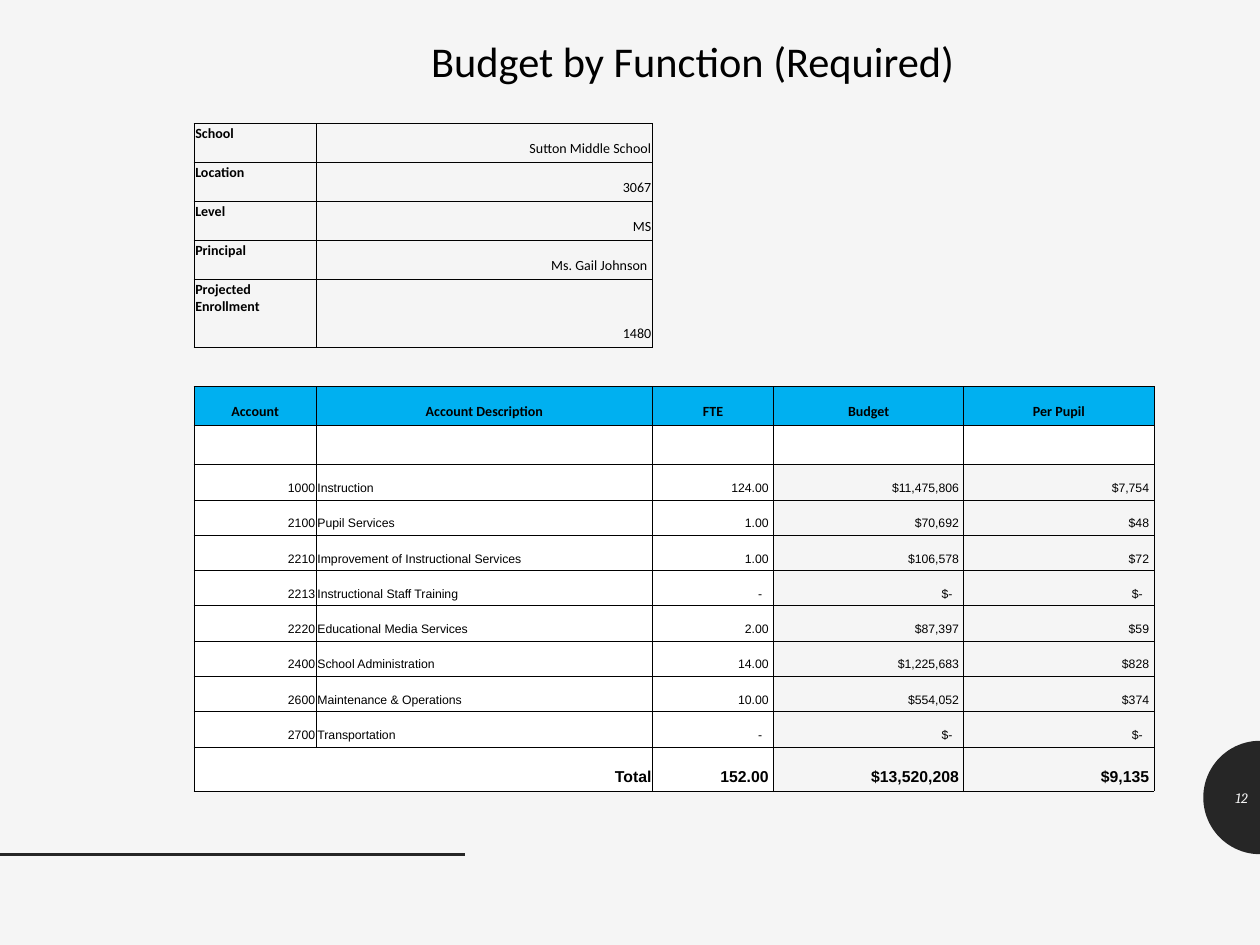
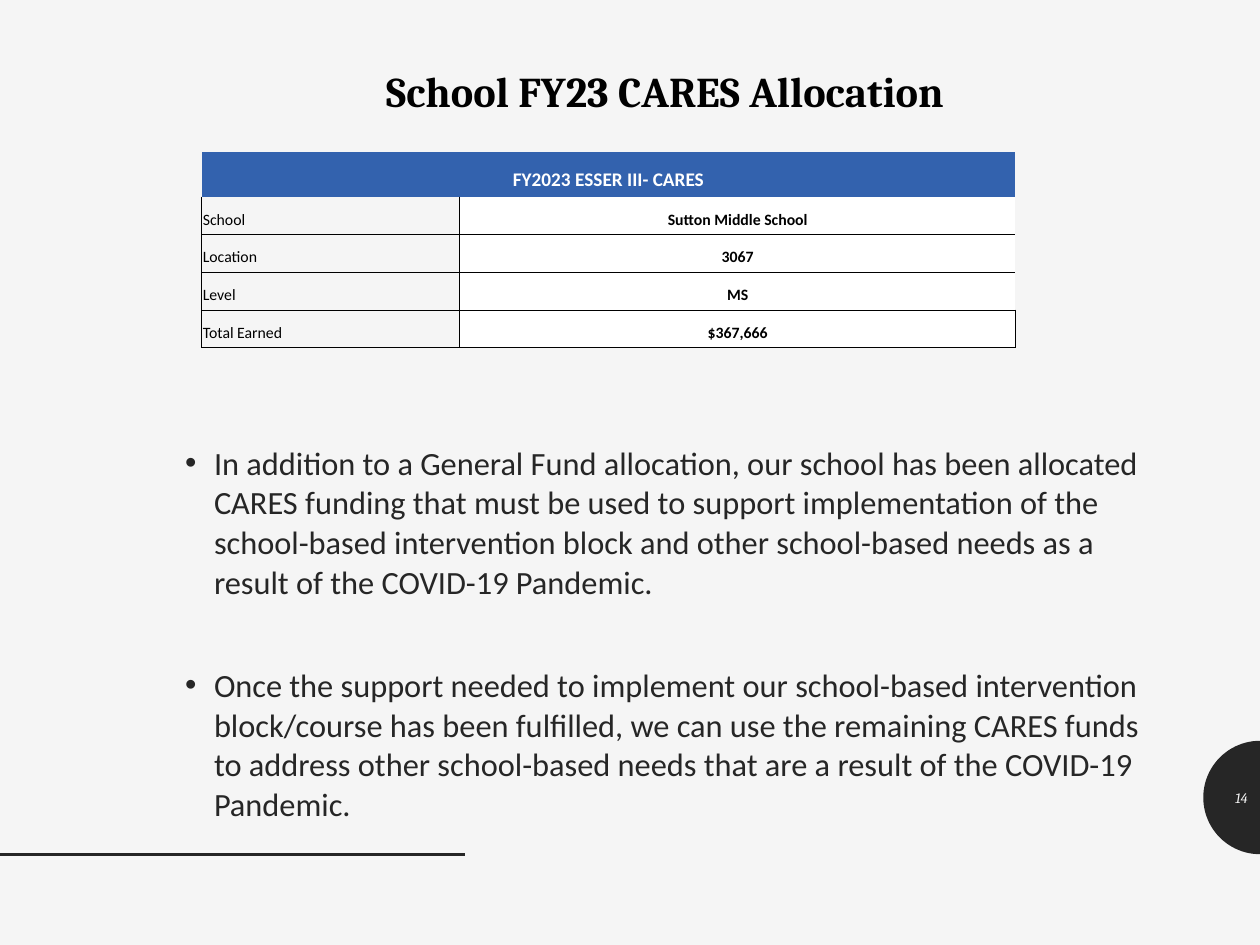
from dataclasses import dataclass, replace
from math import cos, pi, sin

from lxml.etree import SubElement
from pptx import Presentation
from pptx.dml.color import RGBColor
from pptx.enum.shapes import MSO_CONNECTOR
from pptx.enum.text import MSO_ANCHOR, PP_ALIGN
from pptx.oxml.ns import qn
from pptx.slide import Slide
from pptx.table import _Cell
from pptx.text.text import TextFrame, _Paragraph
from pptx.util import Inches, Pt

COLORS = {
    "paper": "F5F5F5",
    "ink": "262626",
    "black": "000000",
    "white": "FFFFFF",
    "account_header": "00B0F0",
    "cares_header": "3362AE",
}
NO_STYLE_NO_GRID = "{2D5ABB26-0587-4C30-8999-92F81FD0307C}"
ALL_SIDES = "LRTB"


@dataclass(frozen=True)
class Type:
    size: float
    font: str = "Calibri"
    color: str = "black"
    bold: bool = False
    italic: bool = False


@dataclass(frozen=True)
class Look:
    type: Type
    align: PP_ALIGN = PP_ALIGN.LEFT
    anchor: MSO_ANCHOR = MSO_ANCHOR.BOTTOM
    fill: str | None = None
    borders: str = ALL_SIDES
    right: float = 0.01


@dataclass(frozen=True)
class Entry:
    text: str
    look: Look
    columns: int = 1


@dataclass(frozen=True)
class Account:
    number: str
    description: str
    fte: str
    budget: str
    per_pupil: str


EMPTY = Entry("", Look(Type(8), borders=""))

SCHOOL_FACTS = [
    ("School", "Sutton Middle School"),
    ("Location", "3067"),
    ("Level", "MS"),
    ("Principal", "Ms. Gail Johnson"),
    ("Projected Enrollment", "1480"),
]
ACCOUNT_HEADINGS = ["Account", "Account Description", "FTE", "Budget", "Per Pupil"]
ACCOUNTS = [
    Account("1000", "Instruction", "124.00", "$11,475,806", "$7,754"),
    Account("2100", "Pupil Services", "1.00", "$70,692", "$48"),
    Account("2210", "Improvement of Instructional Services", "1.00", "$106,578", "$72"),
    Account("2213", "Instructional Staff Training", "-", "$-", "$-"),
    Account("2220", "Educational Media Services", "2.00", "$87,397", "$59"),
    Account("2400", "School Administration", "14.00", "$1,225,683", "$828"),
    Account("2600", "Maintenance & Operations", "10.00", "$554,052", "$374"),
    Account("2700", "Transportation", "-", "$-", "$-"),
]
TOTALS = ["152.00", "$13,520,208", "$9,135"]
CARES_FACTS = [
    ("School", "Sutton Middle School", "LB"),
    ("Location", "3067", "LTB"),
    ("Level", "MS", "LTB"),
    ("Total Earned", "$367,666", ALL_SIDES),
]
CARES_NOTES = [
    "In addition to a General Fund allocation, our school has been allocated CARES "
    "funding that must be used to support implementation of the school-based "
    "intervention block and other school-based needs as a result of the COVID-19 "
    "Pandemic.",
    "Once the support needed to implement our school-based intervention block/course "
    "has been fulfilled, we can use the remaining CARES funds to address other "
    "school-based needs that are a result of the COVID-19 Pandemic.",
]


def rgb(name: str) -> RGBColor:
    return RGBColor.from_string(COLORS[name])


def set_type(para: _Paragraph, style: Type) -> None:
    for span in para.runs:
        font = span.font
        font.name, font.size = style.font, Pt(style.size)
        font.bold, font.italic = style.bold, style.italic
        font.color.rgb = rgb(style.color)


def add_box(page: Slide, left: float, top: float, width: float, height: float,
            anchor: MSO_ANCHOR = MSO_ANCHOR.MIDDLE) -> TextFrame:
    box = page.shapes.add_textbox(Inches(left), Inches(top), Inches(width), Inches(height))
    box.text_frame.word_wrap = True
    box.text_frame.vertical_anchor = anchor
    return box.text_frame


def add_title(page: Slide, text: str, left: float, top: float, style: Type) -> None:
    frame = add_box(page, left, top, 9, 0.43)
    frame.text = text
    para = frame.paragraphs[0]
    para.alignment = PP_ALIGN.CENTER
    para.line_spacing = 0.8
    set_type(para, style)


def add_page(deck: Presentation, number: int) -> Slide:
    """Add a page with the background, floor line and numbered half disc."""
    page = deck.slides.add_slide(deck.slide_layouts[6])
    page.background.fill.solid()
    page.background.fill.fore_color.rgb = rgb("paper")

    radius, center_x, center_y, steps = 0.45, 10, 6.33, 48
    angles = [pi / 2 + pi * step / steps for step in range(steps + 1)]
    points = [(Inches(center_x + radius * cos(angle)), Inches(center_y + radius * sin(angle)))
              for angle in angles]
    builder = page.shapes.build_freeform(*points[0])
    builder.add_line_segments(points[1:], close=True)
    disc = builder.convert_to_shape()
    disc.shadow.inherit = False
    disc.fill.solid()
    disc.fill.fore_color.rgb = rgb("ink")
    disc.line.fill.background()

    floor = page.shapes.add_connector(
        MSO_CONNECTOR.STRAIGHT, 0, Inches(6.78), Inches(3.69), Inches(6.78))
    floor.line.color.rgb = rgb("ink")
    floor.line.width = Pt(2)
    SubElement(floor._element.spPr, qn("a:effectLst"))

    frame = add_box(page, 9.55, 6.13, 0.45, 0.4)
    frame.text = str(number)
    frame.paragraphs[0].alignment = PP_ALIGN.RIGHT
    set_type(frame.paragraphs[0], Type(8.2, "Cambria", "paper", italic=True))
    return page


def set_borders(cell: _Cell, sides: str) -> None:
    properties = cell._tc.get_or_add_tcPr()
    for position, side in enumerate(sides):
        line = SubElement(properties, qn(f"a:ln{side}"), w=str(Pt(0.5)))
        fill = SubElement(line, qn("a:solidFill"))
        SubElement(fill, qn("a:srgbClr"), val=COLORS["black"])
        properties.insert(position, line)


def fill_cell(cell: _Cell, entry: Entry) -> None:
    look = entry.look
    cell.margin_left = cell.margin_top = Inches(0.01)
    cell.margin_right, cell.margin_bottom = Inches(look.right), Inches(0.04)
    cell.vertical_anchor = look.anchor
    if look.fill:
        cell.fill.solid()
        cell.fill.fore_color.rgb = rgb(look.fill)
    else:
        cell.fill.background()
    set_borders(cell, look.borders)
    if entry.text:
        cell.text_frame.text = entry.text
    para = cell.text_frame.paragraphs[0]
    para.alignment = look.align
    set_type(para, look.type)
    if not entry.text:
        SubElement(para._p, qn("a:endParaRPr"), sz=str(int(look.type.size * 100)))


def add_grid(page: Slide, left: float, top: float, widths: list[float],
             heights: list[float], rows: list[list[Entry]]) -> None:
    frame = page.shapes.add_table(
        len(heights), len(widths), Inches(left), Inches(top),
        Inches(sum(widths)), Inches(sum(heights)))
    table = frame.table
    table.first_row = table.horz_banding = False
    table._tbl.tblPr.find(qn("a:tableStyleId")).text = NO_STYLE_NO_GRID
    for column, width in zip(table.columns, widths):
        column.width = Inches(width)
    for row, height in zip(table.rows, heights):
        row.height = Inches(height)
    for row_index, entries in enumerate(rows):
        column_index = 0
        for entry in entries:
            last = column_index + entry.columns - 1
            cell = table.cell(row_index, column_index)
            if entry.columns > 1:
                cell.merge(table.cell(row_index, last))
            fill_cell(cell, entry)
            for covered in range(column_index + 1, last + 1):
                fill_cell(table.cell(row_index, covered), replace(entry, text=""))
            column_index = last + 1


def figure(text: str, style: Type, fill: str | None) -> Entry:
    """Right-aligned number; a dash for zero stands further from the edge."""
    inset = 0.09 if text.endswith("-") else 0.04
    return Entry(text, Look(style, PP_ALIGN.RIGHT, fill=fill, right=inset))


def figures(values: list[str], style: Type) -> list[Entry]:
    return [figure(text, style, fill) for text, fill in zip(values, ("white", None, None))]


def budget_rows() -> list[list[Entry]]:
    label = Look(Type(8, bold=True), anchor=MSO_ANCHOR.TOP)
    value = Look(Type(8), PP_ALIGN.RIGHT)
    heading = Look(Type(8, bold=True), PP_ALIGN.CENTER, fill="account_header")
    plain = Look(Type(7, "Arial"), fill="white")
    total = Type(9, "Arial", bold=True)

    rows = []
    for name, text in SCHOOL_FACTS:
        look = replace(value, right=0.04) if name == "Principal" else value
        rows.append([Entry(name, label), Entry(text, look)] + [EMPTY] * 3)
    rows.append([EMPTY] * 5)
    rows.append([Entry(text, heading) for text in ACCOUNT_HEADINGS])
    rows.append([Entry("", plain)] * 5)
    for account in ACCOUNTS:
        rows.append([
            Entry(account.number, replace(plain, align=PP_ALIGN.RIGHT)),
            Entry(account.description, plain),
            *figures([account.fte, account.budget, account.per_pupil], plain.type),
        ])
    total_look = Look(total, PP_ALIGN.RIGHT, fill="white")
    rows.append([Entry("Total", total_look, columns=2), *figures(TOTALS, total)])
    return rows


def cares_rows() -> list[list[Entry]]:
    heading = Look(Type(11, color="white", bold=True), PP_ALIGN.CENTER,
                   fill="cares_header", borders="")
    value = Look(Type(9, bold=True), PP_ALIGN.CENTER, fill="white")
    rows = [[Entry("FY2023 ESSER III- CARES", heading, columns=2)]]
    for index, (name, text, sides) in enumerate(CARES_FACTS):
        label = Look(Type(9), borders=ALL_SIDES if index else "LRB")
        rows.append([Entry(name, label), Entry(text, replace(value, borders=sides))])
    return rows


def add_notes_list(page: Slide) -> None:
    frame = add_box(page, 1.37, 3.46, 7.85, 3.27, MSO_ANCHOR.TOP)
    frame.text = "\n".join(CARES_NOTES)
    for index, para in enumerate(frame.paragraphs):
        para.line_spacing = 1.02
        if index:
            para.space_before = Pt(36.5)
        properties = para._p.get_or_add_pPr()
        properties.set("marL", str(Inches(0.23)))
        properties.set("indent", str(-Inches(0.23)))
        SubElement(properties, qn("a:buFont"), typeface="Arial")
        SubElement(properties, qn("a:buChar"), char="•")
        set_type(para, Type(18.5, color="ink"))


def main() -> None:
    deck = Presentation()
    deck.slide_width, deck.slide_height = Inches(10), Inches(7.5)

    budget = add_page(deck, 12)
    add_title(budget, "Budget by Function (Required)", 1, 0.3, Type(24.2))
    heights = [0.31] * 4 + [0.54] + [0.31] * 3 + [0.28] * len(ACCOUNTS) + [0.35]
    add_grid(budget, 1.54, 0.98, [0.97, 2.67, 0.96, 1.51, 1.51], heights, budget_rows())

    cares = add_page(deck, 14)
    add_title(cares, "School FY23 CARES Allocation", 0.78, 0.54,
              Type(24.2, "Cambria", bold=True))
    add_notes_list(cares)
    add_grid(cares, 1.6, 1.21, [2.05, 4.41], [0.35] + [0.3] * len(CARES_FACTS), cares_rows())

    deck.save("out.pptx")


if __name__ == "__main__":
    main()
